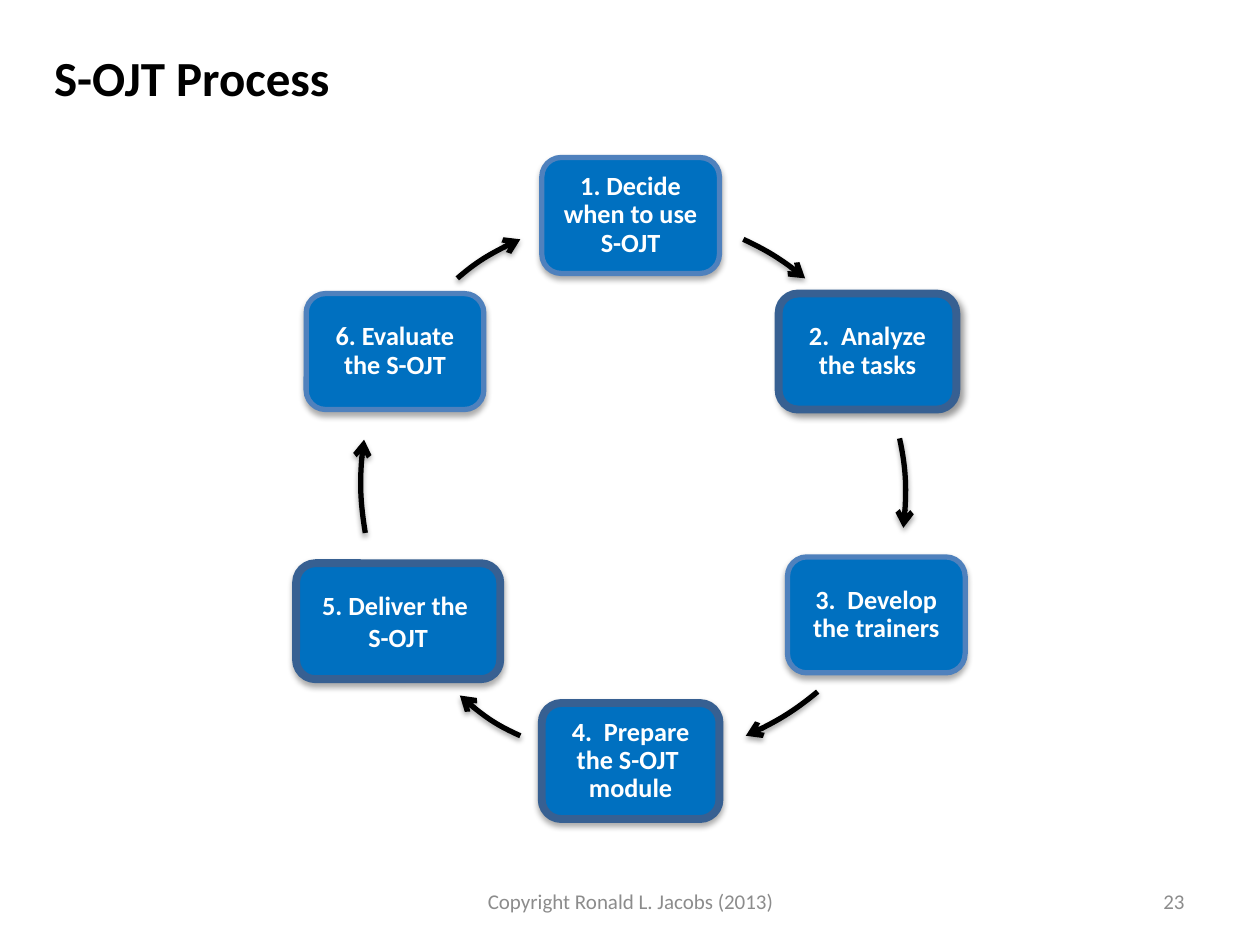
from lxml import etree
from pptx import Presentation
from pptx.dml.color import RGBColor
from pptx.enum.shapes import MSO_SHAPE
from pptx.enum.text import MSO_ANCHOR, MSO_AUTO_SIZE, PP_ALIGN
from pptx.oxml.ns import qn
from pptx.util import Inches, Pt

ROUNDED = MSO_SHAPE.ROUNDED_RECTANGLE
TOP, MIDDLE = MSO_ANCHOR.TOP, MSO_ANCHOR.MIDDLE
LEFT, CENTER, RIGHT = PP_ALIGN.LEFT, PP_ALIGN.CENTER, PP_ALIGN.RIGHT
NO_AUTOFIT = MSO_AUTO_SIZE.NONE

BLACK = RGBColor(0x00, 0x00, 0x00)
WHITE = RGBColor(0xFF, 0xFF, 0xFF)
GRAY = RGBColor(0x8C, 0x8C, 0x8C)
BLUE = RGBColor(0x00, 0x70, 0xC0)
LIGHT_EDGE = (RGBColor(0x4F, 0x81, 0xBD), 3)
DARK_EDGE = (RGBColor(0x37, 0x60, 0x92), 4.5)

FONT = "Calibri"
STEP_WIDTH, STEP_HEIGHT = 1.41, 0.92
CYCLE_SIZE = 4.33
STEP_SHADOW = (32, 3.5, 2.2, 90)
RAISED_SHADOW = (40, 4, 3, 45)
ARROW_SHADOW = (35, 3.1, 1.8, 90)

STEPS = [
    ("1. Decide when to use S-OJT", 4.3, 1.25, STEP_WIDTH, LIGHT_EDGE, STEP_SHADOW, 0.9),
    ("2.  Analyze the tasks", 6.18, 2.33, STEP_WIDTH, DARK_EDGE, RAISED_SHADOW, 0.9),
    ("3.  Develop the trainers", 6.25, 4.42, STEP_WIDTH, LIGHT_EDGE, STEP_SHADOW, 0.9),
    ("4.  Prepare the S-OJT  module", 4.3, 5.58, STEP_WIDTH, DARK_EDGE, STEP_SHADOW, 0.9),
    ("5. Deliver the  S-OJT", 2.35, 4.47, 1.62, DARK_EDGE, STEP_SHADOW, 1.0),
    ("6. Evaluate the S-OJT", 2.43, 2.33, STEP_WIDTH, LIGHT_EDGE, STEP_SHADOW, 0.9),
]

ARROWS = [
    (2.85, 1.71, [(5.9, 1.9), (6.07, 1.98), (6.24, 2.08), (6.39, 2.21)]),
    (2.86, 1.76, [(7.14, 3.48), (7.19, 3.71), (7.2, 3.95), (7.17, 4.19)]),
    (2.9, 1.69, [(6.49, 5.49), (6.32, 5.63), (6.13, 5.75), (5.92, 5.84)]),
    (2.92, 1.74, [(4.13, 5.84), (3.95, 5.76), (3.79, 5.65), (3.65, 5.52)]),
    (2.86, 1.65, [(2.9, 4.23), (2.86, 3.99), (2.85, 3.74), (2.89, 3.49)]),
    (2.85, 1.71, [(3.63, 2.21), (3.78, 2.08), (3.95, 1.98), (4.13, 1.9)]),
]


def write_text(shape, text, size, color, align, anchor, bold=False):
    frame = shape.text_frame
    frame.vertical_anchor = anchor
    frame.text = text
    para = frame.paragraphs[0]
    para.alignment = align
    para.font.name = FONT
    para.font.size = Pt(size)
    para.font.bold = bold
    para.font.color.rgb = color
    return para


def set_shadow(shape, opacity, blur, distance, angle):
    shape.shadow.inherit = False
    effects = shape.element.spPr.find(qn("a:effectLst"))
    shadow = etree.SubElement(
        effects, qn("a:outerShdw"), blurRad=str(Pt(blur)), dist=str(Pt(distance)),
        dir=str(angle * 60000), rotWithShape="0")
    color = etree.SubElement(shadow, qn("a:srgbClr"), val=str(BLACK))
    etree.SubElement(color, qn("a:alpha"), val=str(opacity * 1000))


def set_line(shape, color, width):
    shape.line.color.rgb = color
    shape.line.width = Pt(width)


def add_step(slide, text, left, top, width, edge, shadow, spacing):
    box = slide.shapes.add_shape(
        ROUNDED, Inches(left), Inches(top), Inches(width), Inches(STEP_HEIGHT))
    box.fill.solid()
    box.fill.fore_color.rgb = BLUE
    set_line(box, *edge)
    set_shadow(box, *shadow)
    frame = box.text_frame
    frame.word_wrap = True
    frame.margin_left = frame.margin_right = Inches(0.06)
    frame.margin_top = frame.margin_bottom = Inches(0.06)
    para = write_text(box, text, 15, WHITE, CENTER, MIDDLE, bold=True)
    para.line_spacing = spacing


def add_curved_arrow(slide, left, top, points):
    start, *others = [(Inches(x), Inches(y)) for x, y in points]
    builder = slide.shapes.build_freeform(*start)
    builder.add_line_segments(others, close=False)
    arrow = builder.convert_to_shape()
    outline = next(arrow.element.iter(qn("a:path")))
    segments = outline.findall(qn("a:lnTo"))
    curve = etree.SubElement(outline, qn("a:cubicBezTo"))
    for segment in segments:
        curve.append(segment[0])
        outline.remove(segment)
    fit_to_cycle(arrow, outline, Inches(left), Inches(top))
    arrow.fill.background()
    set_line(arrow, BLACK, 3)
    etree.SubElement(arrow.element.spPr.find(qn("a:ln")), qn("a:tailEnd"), type="arrow")
    set_shadow(arrow, *ARROW_SHADOW)


def fit_to_cycle(arrow, outline, left, top):
    size = Inches(CYCLE_SIZE)
    for point in outline.iter(qn("a:pt")):
        point.set("x", str(int(point.get("x")) + arrow.left - left))
        point.set("y", str(int(point.get("y")) + arrow.top - top))
    outline.set("w", str(size))
    outline.set("h", str(size))
    arrow.left, arrow.top = left, top
    arrow.width = arrow.height = size


def add_title(slide, text):
    title = slide.shapes.title
    title.left, title.top = Inches(0.33), Inches(0.33)
    title.width, title.height = Inches(2.41), Inches(0.57)
    write_text(title, text, 28, BLACK, LEFT, TOP, bold=True)
    title.text_frame.word_wrap = False
    title.text_frame.auto_size = NO_AUTOFIT


def add_footer(slide, text, left, width, align):
    box = slide.shapes.add_textbox(Inches(left), Inches(6.95), Inches(width), Inches(0.4))
    box.text_frame.word_wrap = True
    write_text(box, text, 12, GRAY, align, MIDDLE)


def main():
    deck = Presentation()
    deck.slide_width, deck.slide_height = Inches(10), Inches(7.5)
    slide = deck.slides.add_slide(deck.slide_layouts[5])
    add_title(slide, "S-OJT Process")
    for step, arrow in zip(STEPS, ARROWS):
        add_step(slide, *step)
        add_curved_arrow(slide, *arrow)
    add_footer(slide, "23", 7.17, 2.33, RIGHT)
    add_footer(slide, "Copyright Ronald L. Jacobs (2013)", 3.42, 3.17, CENTER)
    deck.save("out.pptx")


if __name__ == "__main__":
    main()
